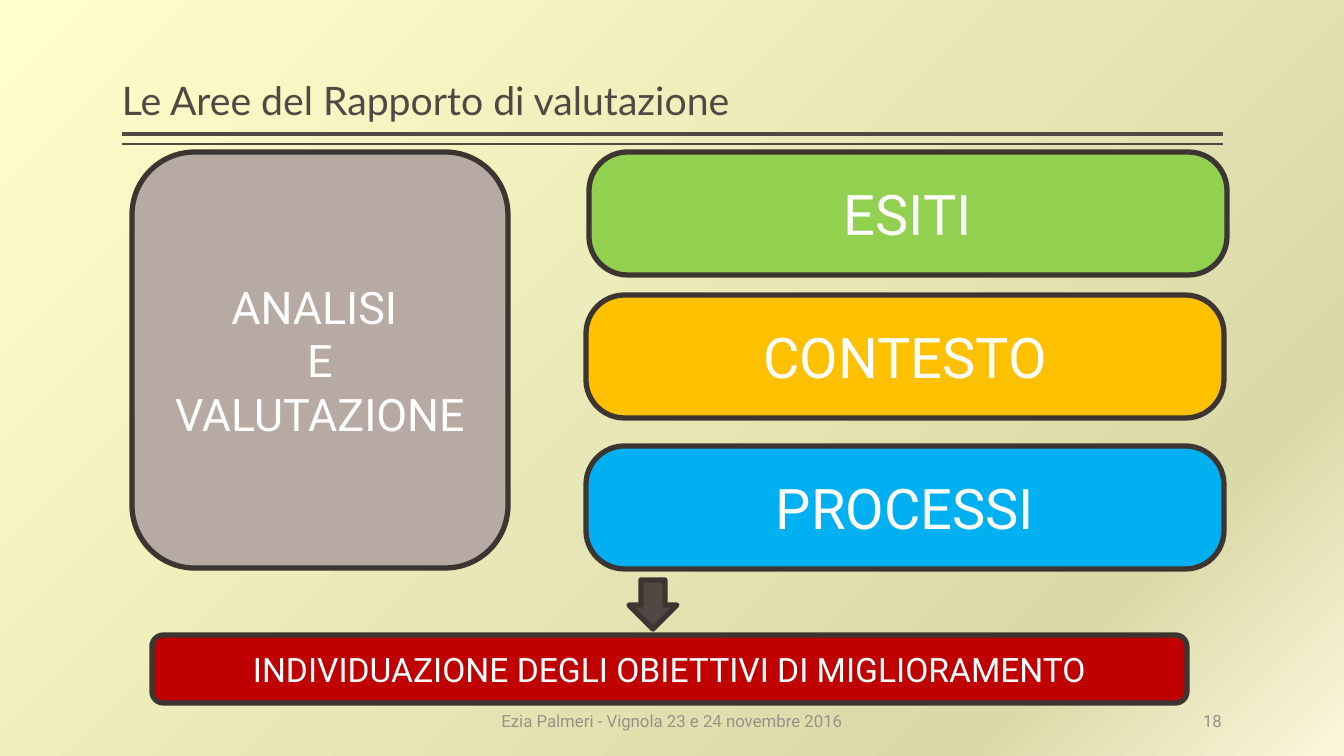
from lxml import etree
from pptx import Presentation
from pptx.dml.color import RGBColor
from pptx.enum.shapes import MSO_CONNECTOR, MSO_SHAPE
from pptx.enum.text import MSO_ANCHOR as Anchor, MSO_AUTO_SIZE, PP_ALIGN as Align
from pptx.oxml import parse_xml
from pptx.oxml.ns import nsdecls, qn
from pptx.util import Pt

SCALE = 914400 / 100.8
COLORS = {
    "dark": "514843", "outline": "3C3532", "footer": "9D8F88", "white": "FFFFFF",
    "taupe": "B6AAA2", "green": "92D050", "amber": "FFC000", "blue": "00B0F0",
    "red": "C00000",
}
BACKGROUND_STOPS = [(0, "FEF6DA"), (18, "DADAA9"), (100, "FFFFCC")]
AREAS = [
    ("ESITI", "green", 3, 0),
    ("CONTESTO", "amber", 0, 143),
    ("PROCESSI", "blue", 0, 294),
]


def px(length):
    return round(length * SCALE)


def color(name):
    return RGBColor.from_string(COLORS[name])


def write(shape, lines, size, ink, font="Roboto", align=Align.CENTER,
          anchor=Anchor.MIDDLE, side_inset=10):
    frame = shape.text_frame
    frame.word_wrap = True
    frame.auto_size = MSO_AUTO_SIZE.NONE
    frame.vertical_anchor = anchor
    frame.margin_left = frame.margin_right = px(side_inset)
    frame.margin_top = frame.margin_bottom = px(5)
    for index, line in enumerate(lines):
        paragraph = frame.add_paragraph() if index else frame.paragraphs[0]
        paragraph.alignment = align
        run = paragraph.add_run()
        run.text = line
        run.font.size = Pt(size)
        run.font.name = font
        run.font.color.rgb = color(ink)


def add_block(slide, box, fill, kind=MSO_SHAPE.ROUNDED_RECTANGLE, rounding=None):
    shape = slide.shapes.add_shape(kind, *map(px, box))
    shape.shadow.inherit = False
    shape.fill.solid()
    shape.fill.fore_color.rgb = color(fill)
    shape.line.color.rgb = color("outline")
    shape.line.width = Pt(3.78)
    if rounding is not None:
        shape.adjustments[0] = rounding
    return shape


def paint_background(slide):
    fill = slide.background.fill
    fill.gradient()
    fill.gradient_angle = 135
    stops = slide.element.find(".//" + qn("a:gsLst"))
    for stop in list(stops):
        stops.remove(stop)
    for percent, value in BACKGROUND_STOPS:
        stops.append(parse_xml(
            f'<a:gs {nsdecls("a")} pos="{percent * 1000}">'
            f'<a:srgbClr val="{value}"/></a:gs>'))


def add_heading(slide, box):
    left, top, width, height = box
    title = slide.shapes.title
    title.left, title.top, title.width, title.height = map(px, box)
    write(title, ["Le Aree del Rapporto di valutazione"], 28, "dark",
          "Lato", Align.LEFT, Anchor.BOTTOM, 0)
    title.text_frame.paragraphs[0].line_spacing = 0.9
    for offset, weight in ((5, 3), (15, 1)):
        y = px(top + height + offset)
        rule = slide.shapes.add_connector(
            MSO_CONNECTOR.STRAIGHT, px(left), y, px(left + width), y)
        rule.line.color.rgb = color("dark")
        rule.line.width = Pt(weight)
        etree.SubElement(rule._element.spPr, qn("a:effectLst"))


def add_footer(slide, box):
    left, top, width, height = box
    number_width = 202
    note_left = left + number_width
    number_left = left + width - number_width
    parts = [
        ("Ezia Palmeri - Vignola 23 e 24 novembre 2016", note_left,
         number_left - note_left, Align.CENTER),
        ("18", number_left, number_width, Align.RIGHT),
    ]
    for text, part_left, part_width, align in parts:
        textbox = slide.shapes.add_textbox(
            *map(px, (part_left, top, part_width, height)))
        write(textbox, [text], 12, "footer", align=align, side_inset=0)


def add_areas(slide, box):
    left, top, width, height = box
    analysis = add_block(slide, (left, top, 376, height), "taupe")
    write(analysis, ["ANALISI ", "E", "VALUTAZIONE"], 32, "white")
    area_left = left + 454
    for name, fill, shift, offset in AREAS:
        area = add_block(
            slide, (area_left + shift, top + offset, width - 454, 123),
            fill, rounding=0.313)
        write(area, [name], 40, "white")


def add_outcome(slide, box):
    left, top, width, height = box
    add_block(slide, (left + 477, top, 48, 49), "dark", MSO_SHAPE.DOWN_ARROW)
    goal = add_block(slide, (left, top + 55, width, height - 55), "red")
    write(goal, ["INDIVIDUAZIONE DEGLI OBIETTIVI DI MIGLIORAMENTO"], 24, "white")


def main():
    presentation = Presentation()
    presentation.slide_width = px(1344)
    presentation.slide_height = px(756)
    slide = presentation.slides.add_slide(presentation.slide_layouts[5])
    paint_background(slide)
    add_heading(slide, (122, 8, 1101, 121))
    add_footer(slide, (122, 701, 1100, 40))
    add_areas(slide, (132, 152, 1092, 416))
    add_outcome(slide, (152, 580, 1035, 123))
    presentation.save("out.pptx")


if __name__ == "__main__":
    main()
